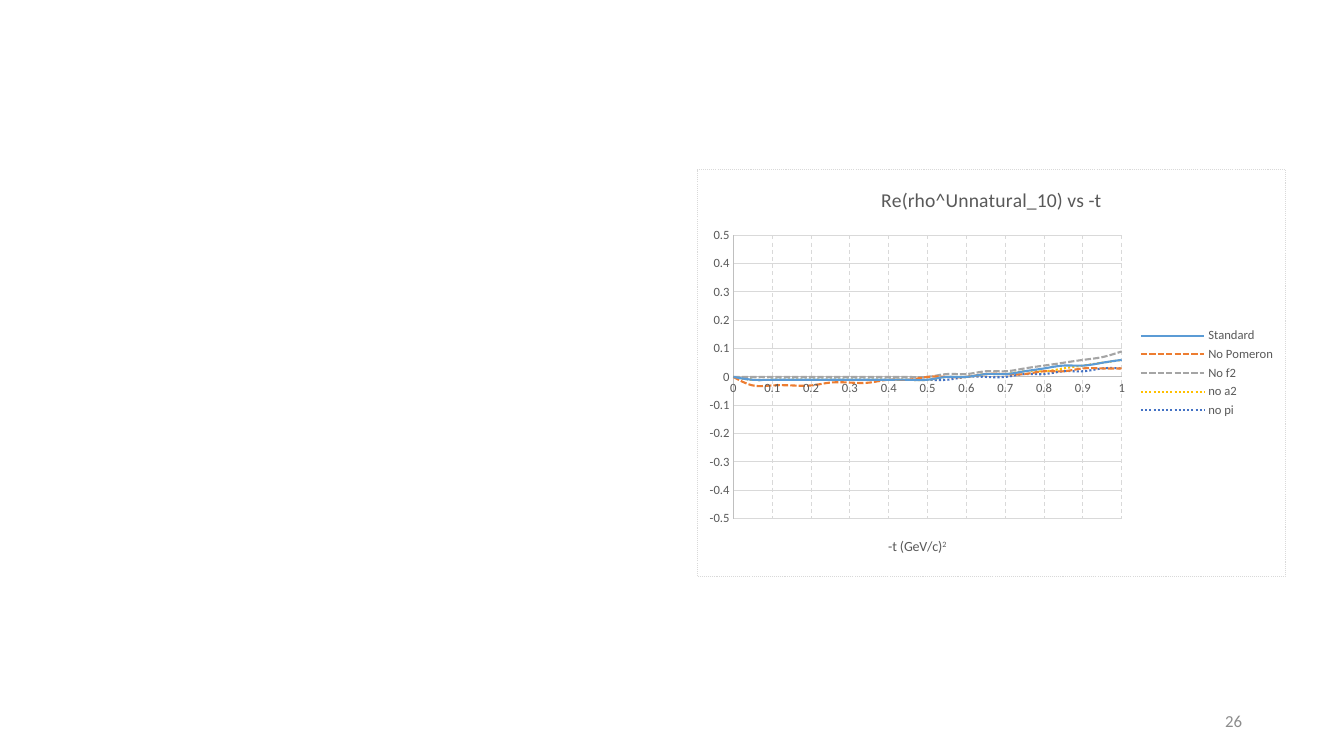
from dataclasses import dataclass
from typing import Any

from lxml import etree
from pptx import Presentation
from pptx.chart.data import XyChartData
from pptx.dml.color import RGBColor
from pptx.enum.chart import XL_CHART_TYPE as ChartType, XL_LEGEND_POSITION as LegendPosition
from pptx.enum.chart import XL_TICK_MARK as TickMark
from pptx.enum.dml import MSO_LINE as Dash
from pptx.enum.text import MSO_ANCHOR as Anchor, PP_ALIGN as Align
from pptx.oxml import parse_xml
from pptx.oxml.ns import nsdecls, qn
from pptx.util import Emu, Pt

PX_PER_INCH = 100.8
FONT = "Calibri"
WHITE, TEXT_GREY, GRID_GREY, AXIS_GREY = "FFFFFF", "595959", "D9D9D9", "BFBFBF"


@dataclass(frozen=True)
class Box:
    left: int
    top: int
    width: int
    height: int

    def emu(self) -> tuple[Emu, ...]:
        return tuple(px(n) for n in (self.left, self.top, self.width, self.height))


@dataclass(frozen=True)
class Curve:
    name: str
    color: str
    dash: Any
    hundredths: tuple[int, ...]


@dataclass(frozen=True)
class AxisStyle:
    minimum: float
    maximum: float
    grid_dash: Any


CHART_BOX = Box(697, 169, 589, 408)
PLOT_BOX = Box(733, 235, 389, 284)
NUMBER_BOX = Box(950, 701, 302, 40)
HORIZONTAL = AxisStyle(0, 1, Dash.DASH)
VERTICAL = AxisStyle(-0.5, 0.5, Dash.SOLID)
CURVES = (
    Curve("Standard", "5B9BD5", Dash.SOLID,
          (0, *[-1] * 10, 0, 0, 1, 1, 2, 3, 4, 4, 5, 6)),
    Curve("No Pomeron", "ED7D31", Dash.SQUARE_DOT,
          (0, *[-3] * 4, *[-2] * 3, -1, -1, 0, 0, 0, 1, 1, 1, 2, 2, 3, 3, 3)),
    Curve("No f2", "A5A5A5", Dash.SQUARE_DOT,
          (*[0] * 11, 1, 1, 2, 2, 3, 4, 5, 6, 7, 9)),
    Curve("no a2", "FFC000", Dash.ROUND_DOT,
          (0, *[-1] * 10, 0, 0, 1, 1, 2, 2, 3, 4, 5, 6)),
    Curve("no pi", "4472C4", Dash.ROUND_DOT,
          (0, *[-1] * 11, 0, 0, 0, 1, 1, 2, 2, 3, 3)),
)


def px(count: float) -> Emu:
    return Emu(round(count * 914400 / PX_PER_INCH))


def rgb(color: str) -> RGBColor:
    return RGBColor.from_string(color)


def set_font(font: Any, size: float, color: str = TEXT_GREY) -> None:
    for name, value in {"name": FONT, "size": Pt(size), "bold": False}.items():
        setattr(font, name, value)
    font.color.rgb = rgb(color)


def set_line(line: Any, color: str, width: float, dash: Any = Dash.SOLID) -> None:
    line.color.rgb = rgb(color)
    line.width = Pt(width)
    line.dash_style = dash


def style_axis(axis: Any, style: AxisStyle) -> None:
    settings = {
        "minimum_scale": style.minimum,
        "maximum_scale": style.maximum,
        "major_unit": 0.1,
        "major_tick_mark": TickMark.NONE,
        "minor_tick_mark": TickMark.NONE,
        "has_major_gridlines": True,
    }
    for name, value in settings.items():
        setattr(axis, name, value)
    set_line(axis.format.line, AXIS_GREY, 0.75)
    set_line(axis.major_gridlines.format.line, GRID_GREY, 0.75, style.grid_dash)
    set_font(axis.tick_labels.font, 9)


def place_plot(chart: Any) -> None:
    """Fix the inner plot area as fractions of the chart frame."""
    plot_area = chart._chartSpace.chart.plotArea
    for old_layout in plot_area.findall(qn("c:layout")):
        plot_area.remove(old_layout)
    layout = parse_xml(f"<c:layout {nsdecls('c')}><c:manualLayout/></c:layout>")
    fractions = {
        "x": (PLOT_BOX.left - CHART_BOX.left) / CHART_BOX.width,
        "y": (PLOT_BOX.top - CHART_BOX.top) / CHART_BOX.height,
        "w": PLOT_BOX.width / CHART_BOX.width,
        "h": PLOT_BOX.height / CHART_BOX.height,
    }
    values = {"layoutTarget": "inner", "xMode": "edge", "yMode": "edge", **fractions}
    for name, value in values.items():
        etree.SubElement(layout[0], qn(f"c:{name}")).set("val", str(value))
    plot_area.insert(0, layout)


def frame_chart(chart: Any) -> None:
    """Give the chart a white fill and a dotted border."""
    chart._chartSpace.chart.addnext(parse_xml(
        f"<c:spPr {nsdecls('c', 'a')}>"
        f'<a:solidFill><a:srgbClr val="{WHITE}"/></a:solidFill>'
        f'<a:ln w="{Pt(0.75)}"><a:solidFill><a:srgbClr val="{GRID_GREY}"/></a:solidFill>'
        '<a:prstDash val="sysDot"/></a:ln></c:spPr>'))


def add_title_run(title: Any, text: str, size: float) -> Any:
    run = title.text_frame.paragraphs[0].add_run()
    run.text = text
    set_font(run.font, size)
    return run


def add_curves_chart(slide: Any) -> None:
    data = XyChartData()
    for curve in CURVES:
        points = data.add_series(curve.name)
        for step, value in enumerate(curve.hundredths):
            points.add_data_point(step * 5 / 100, value / 100)
    chart = slide.shapes.add_chart(
        ChartType.XY_SCATTER_SMOOTH_NO_MARKERS, *CHART_BOX.emu(), data).chart
    set_font(chart.font, 10, "000000")
    frame_chart(chart)
    place_plot(chart)

    chart.has_title = True
    add_title_run(chart.chart_title, "Re(rho^Unnatural_10) vs -t", 14)
    chart.chart_title.include_in_layout = False
    chart.has_legend = True
    chart.legend.position = LegendPosition.RIGHT
    chart.legend.include_in_layout = False
    set_font(chart.legend.font, 9)

    style_axis(chart.category_axis, HORIZONTAL)
    style_axis(chart.value_axis, VERTICAL)
    axis_title = chart.category_axis.axis_title
    add_title_run(axis_title, "-t (GeV/c)", 10)
    exponent = add_title_run(axis_title, "2", 10)
    exponent._r.get_or_add_rPr().set("baseline", "30000")

    plot = chart.plots[0]
    plot.vary_by_categories = False
    for series, curve in zip(plot.series, CURVES):
        set_line(series.format.line, curve.color, 1.5, curve.dash)
        series._element.find(qn("c:smooth")).set("val", "1")


def add_slide_number(slide: Any, number: str) -> None:
    text_frame = slide.shapes.add_textbox(*NUMBER_BOX.emu()).text_frame
    text_frame.word_wrap = True
    text_frame.vertical_anchor = Anchor.MIDDLE
    paragraph = text_frame.paragraphs[0]
    paragraph.alignment = Align.RIGHT
    run = paragraph.add_run()
    run.text = number
    set_font(run.font, 12, "8C8C8C")


def main() -> None:
    presentation = Presentation()
    presentation.slide_width = px(1344)
    presentation.slide_height = px(756)
    slide = presentation.slides.add_slide(presentation.slide_layouts[6])
    add_curves_chart(slide)
    add_slide_number(slide, "26")
    presentation.save("out.pptx")


if __name__ == "__main__":
    main()
